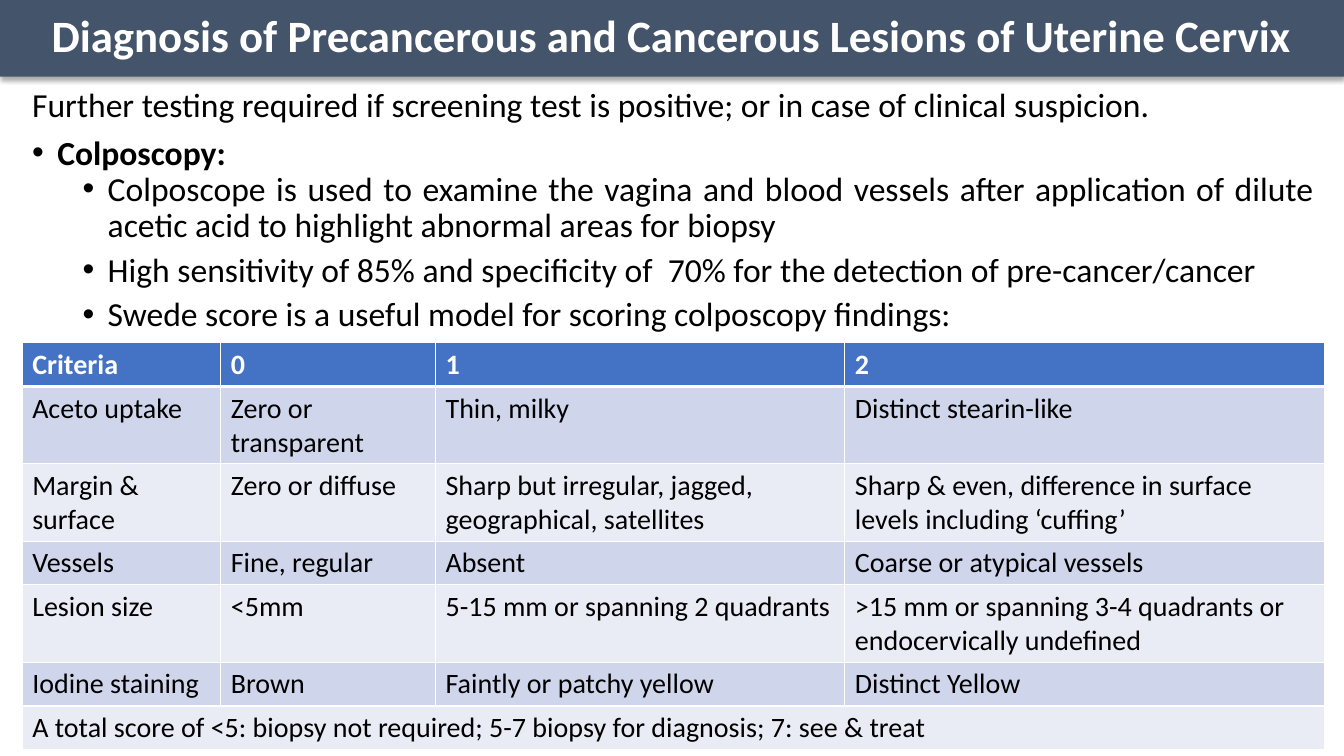
from lxml import etree
from pptx import Presentation
from pptx import util as u
from pptx.dml.color import RGBColor
from pptx.enum import shapes, text
from pptx.oxml import parse_xml
from pptx.oxml.ns import nsdecls, qn

W, H = 13.33, 7.5
MARGIN = 0.22
CONTENT_W = W - 2 * MARGIN + 0.02
FONT = "Calibri"
WHITE, BLACK, SLATE, BLUE = "FFFFFF", "000000", "44546A", "4472C4"
BANDS = ["CFD5EA", "E9EBF5"]
COLUMNS = [1.97, 2.13, 4.06, 4.76]
ROW_H, NOTE_H = 0.41, 0.18

SWEDE_SCORE = [
    ["Criteria", "0", "1", "2"],
    ["Aceto uptake", "Zero or transparent", "Thin, milky", "Distinct stearin-like"],
    ["Margin & surface", "Zero or diffuse",
     "Sharp but irregular, jagged, geographical, satellites",
     "Sharp & even, difference in surface levels including ‘cuffing’"],
    ["Vessels", "Fine, regular", "Absent", "Coarse or atypical vessels"],
    ["Lesion size", "<5mm", "5-15 mm or spanning 2 quadrants",
     ">15 mm or spanning 3-4 quadrants or endocervically undefined"],
    ["Iodine staining", "Brown", "Faintly or patchy yellow", "Distinct Yellow"],
    ["A total score of <5: biopsy not required; 5-7 biopsy for diagnosis; 7: see & treat"],
]

# Text, outline level (None = no bullet), bold
BODY = [
    ("Further testing required if screening test is positive; or in case of clinical suspicion.",
     None, False),
    ("Colposcopy:", 0, True),
    ("Colposcope is used to examine the vagina and blood vessels after application of dilute "
     "acetic acid to highlight abnormal areas for biopsy", 1, False),
    ("High sensitivity of 85% and specificity of  70% for the detection of pre-cancer/cancer",
     1, False),
    ("Swede score is a useful model for scoring colposcopy findings:", 1, False),
]


def rgb(color):
    return RGBColor.from_string(color)


def add_run(p, words, size, color, bold=False):
    r = p.add_run()
    r.text = words
    r.font.name, r.font.size, r.font.bold = FONT, u.Pt(size), bold
    r.font.color.rgb = rgb(color)


def add_bullet(p, level):
    pPr = p._p.get_or_add_pPr()
    pPr.set("marL", str(u.Inches(0.25 + 0.5 * level)))
    pPr.set("indent", str(u.Inches(-0.25)))
    etree.SubElement(pPr, qn("a:buFont"), typeface="Arial")
    etree.SubElement(pPr, qn("a:buChar"), char="•")


def add_title(slide, words):
    sp = slide.shapes.add_shape(shapes.MSO_SHAPE.RECTANGLE, 0, 0, u.Inches(W), u.Inches(0.76))
    sp.fill.solid()
    sp.fill.fore_color.rgb = rgb(SLATE)
    sp.line.fill.background()
    # Soft shadow straight below the bar
    sp._element.spPr.append(parse_xml(
        f'<a:effectLst {nsdecls("a")}><a:outerShdw blurRad="{u.Pt(3.5)}" dist="{u.Pt(2.2)}" '
        f'dir="5400000" rotWithShape="0"><a:srgbClr val="{BLACK}"><a:alpha val="32000"/>'
        '</a:srgbClr></a:outerShdw></a:effectLst>'))
    tf = sp.text_frame
    tf.word_wrap = True
    tf.vertical_anchor = text.MSO_ANCHOR.MIDDLE
    p = tf.paragraphs[0]
    p.alignment, p.line_spacing = text.PP_ALIGN.CENTER, 0.9
    add_run(p, words, 32, WHITE, True)


def add_body(slide, items):
    sp = slide.shapes.add_textbox(*map(u.Inches, (MARGIN, 0.7, CONTENT_W, 6.3)))
    tf = sp.text_frame
    tf.word_wrap = True
    for i, (words, level, bold) in enumerate(items):
        p = tf.add_paragraph() if i else tf.paragraphs[0]
        p.alignment = text.PP_ALIGN.JUSTIFY
        p.line_spacing = 0.9 if level else 1.2
        p.space_before, p.space_after = u.Pt(0), u.Pt(6 if level else 0)
        if level is not None:
            p.level = level
            add_bullet(p, level)
        add_run(p, words, 24, BLACK, bold)


def style_cell(cell, fill, bottom):
    tcPr = cell._tc.get_or_add_tcPr()
    for side, width in (("L", 1), ("R", 1), ("T", 1), ("B", bottom)):
        tcPr.append(parse_xml(
            f'<a:ln{side} {nsdecls("a")} w="{u.Pt(width)}"><a:solidFill>'
            f'<a:srgbClr val="{WHITE}"/></a:solidFill></a:ln{side}>'))
    cell.fill.solid()
    cell.fill.fore_color.rgb = rgb(fill)


def add_score_table(slide, rows):
    heights = [ROW_H] * (len(rows) - 1) + [NOTE_H]
    box = map(u.Inches, (MARGIN, 3.4, sum(COLUMNS), sum(heights)))
    table = slide.shapes.add_table(len(rows), len(COLUMNS), *box).table
    for col, width in zip(table.columns, COLUMNS):
        col.width = u.Inches(width)
    for i, (row, height, words) in enumerate(zip(table.rows, heights, rows)):
        row.height = u.Inches(height)
        header = i == 0
        for cell in row.cells:
            style_cell(cell, BLUE if header else BANDS[(i - 1) % 2], 3 if header else 1)
        for cell, entry in zip(row.cells, words):
            add_run(cell.text_frame.paragraphs[0], entry, 20,
                    WHITE if header else BLACK, header)
    # The closing note spans all columns
    last = len(rows) - 1
    table.cell(last, 0).merge(table.cell(last, len(COLUMNS) - 1))


def main():
    prs = Presentation()
    prs.slide_width, prs.slide_height = u.Inches(W), u.Inches(H)
    slide = prs.slides.add_slide(prs.slide_layouts[6])
    add_title(slide, "Diagnosis of Precancerous and Cancerous Lesions of Uterine Cervix")
    add_body(slide, BODY)
    add_score_table(slide, SWEDE_SCORE)
    prs.save("out.pptx")


if __name__ == "__main__":
    main()
